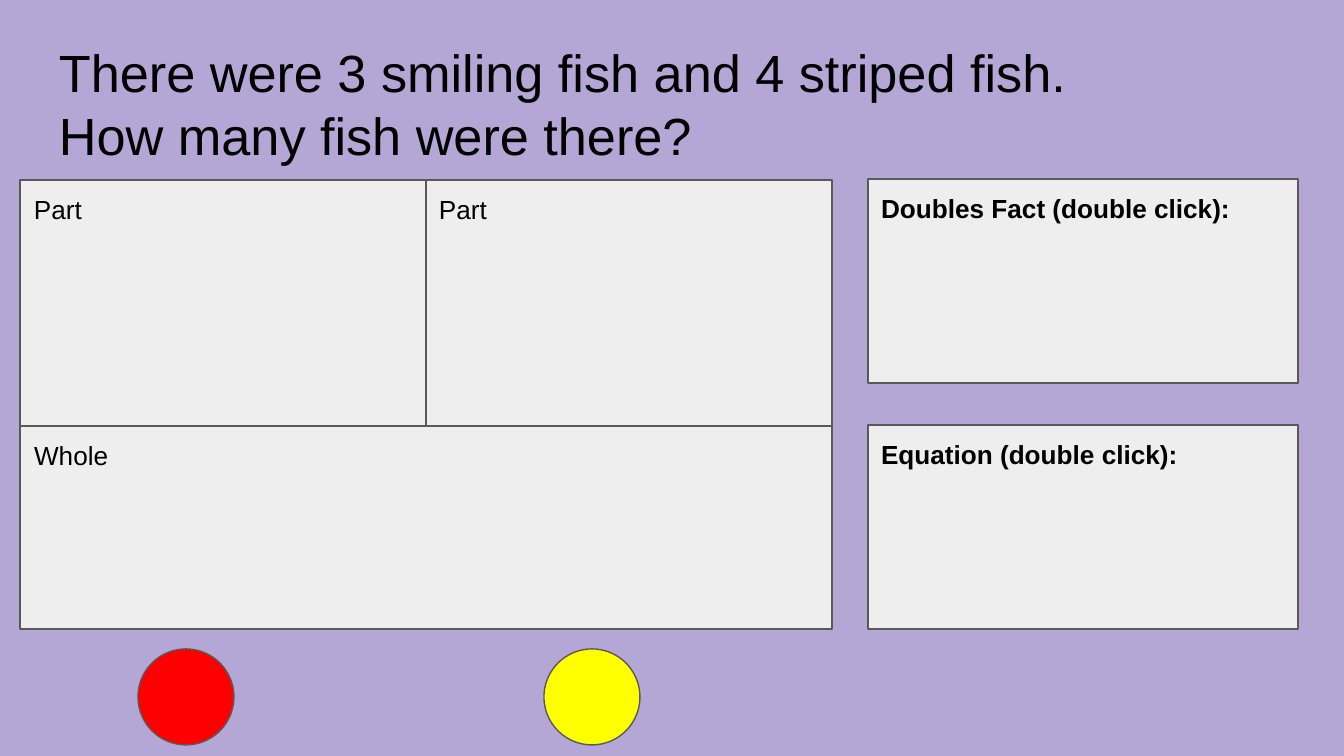
from pptx import Presentation
from pptx.dml.color import RGBColor
from pptx.enum.shapes import MSO_CONNECTOR, MSO_SHAPE
from pptx.enum.text import MSO_ANCHOR
from pptx.util import Emu, Pt
from lxml.etree import SubElement
from pptx.oxml.ns import qn

SCALE = 914400 / 134.4
COLORS = {"page": "B4A7D6", "panel": "EEEEEE", "edge": "595959",
          "text": "000000", "red": "FF0000", "yellow": "FFFF00"}


def px(n):
    return Emu(round(n * SCALE))


def rgb(name):
    return RGBColor.from_string(COLORS[name])


def add_form(shapes, kind, box, fill):
    form = shapes.add_shape(kind, *map(px, box))
    form.shadow.inherit = False
    form.fill.solid()
    form.fill.fore_color.rgb = rgb(fill)
    form.line.color.rgb = rgb("edge")
    form.line.width = Pt(0.75)
    return form


def add_text(shapes, box, lines, size, bold=False, anchor=MSO_ANCHOR.TOP):
    frame = shapes.add_textbox(*map(px, box)).text_frame
    frame.word_wrap = True
    frame.vertical_anchor = anchor
    frame.margin_left = frame.margin_right = px(13)
    frame.margin_top = frame.margin_bottom = px(13)
    for i, line in enumerate(lines):
        para = frame.paragraphs[0] if i == 0 else frame.add_paragraph()
        run = para.add_run()
        run.text = line
        run.font.name = "Arial"
        run.font.size = Pt(size)
        run.font.bold = bold
        run.font.color.rgb = rgb("text")


def add_mat(slide, box, split):
    """Part-part-whole mat: two parts above, the whole below."""
    x, y, w, h = box
    shapes = slide.shapes.add_group_shape().shapes
    parts = add_form(shapes, MSO_SHAPE.RECTANGLE, (x, y, w, split), "panel")
    # Divider between the parts
    mid = px(x + w // 2)
    line = shapes.add_connector(MSO_CONNECTOR.STRAIGHT,
                                mid, px(y), mid, px(y + split))
    line.begin_connect(parts, 0)
    line.end_connect(parts, 2)
    line.line.color.rgb = rgb("edge")
    line.line.width = Pt(0.75)
    SubElement(line._element.spPr, qn("a:effectLst"))
    add_form(shapes, MSO_SHAPE.RECTANGLE, (x, y + split, w, h - split), "panel")
    # Labels
    for dx, dy, wide, label in ((1, 0, 82, "Part"), (w // 2, 0, 82, "Part"),
                                (1, split, 106, "Whole")):
        add_text(shapes, (x + dx, y + dy, wide, 51), [label], 14)


def add_card(slide, box, label):
    x, y, w, h = box
    shapes = slide.shapes.add_group_shape().shapes
    add_form(shapes, MSO_SHAPE.RECTANGLE, box, "panel")
    add_text(shapes, (x, y, w - 44, 62), [label], 14, bold=True)


def add_discs(slide, box, step):
    x, y, w, h = box
    for i, fill in enumerate(("red", "yellow")):
        add_form(slide.shapes, MSO_SHAPE.OVAL, (x + i * step, y, w, h), fill)


def main():
    deck = Presentation()
    deck.slide_width, deck.slide_height = px(1344), px(756)
    slide = deck.slides.add_slide(deck.slide_layouts[6])
    slide.background.fill.solid()
    slide.background.fill.fore_color.rgb = rgb("page")

    # Story problem
    add_text(slide.shapes, (46, 23, 1252, 156),
             ["There were 3 smiling fish and 4 striped fish.",
              "How many fish were there?"], 28, anchor=MSO_ANCHOR.BOTTOM)
    # Counters
    add_discs(slide, (138, 649, 96, 96), 406)
    # Work areas
    add_mat(slide, (20, 180, 812, 449), 246)
    for i, label in enumerate(("Doubles Fact (double click):",
                               "Equation (double click):")):
        add_card(slide, (868, 179 + i * 246, 430, 204), label)

    deck.save("out.pptx")


if __name__ == "__main__":
    main()
